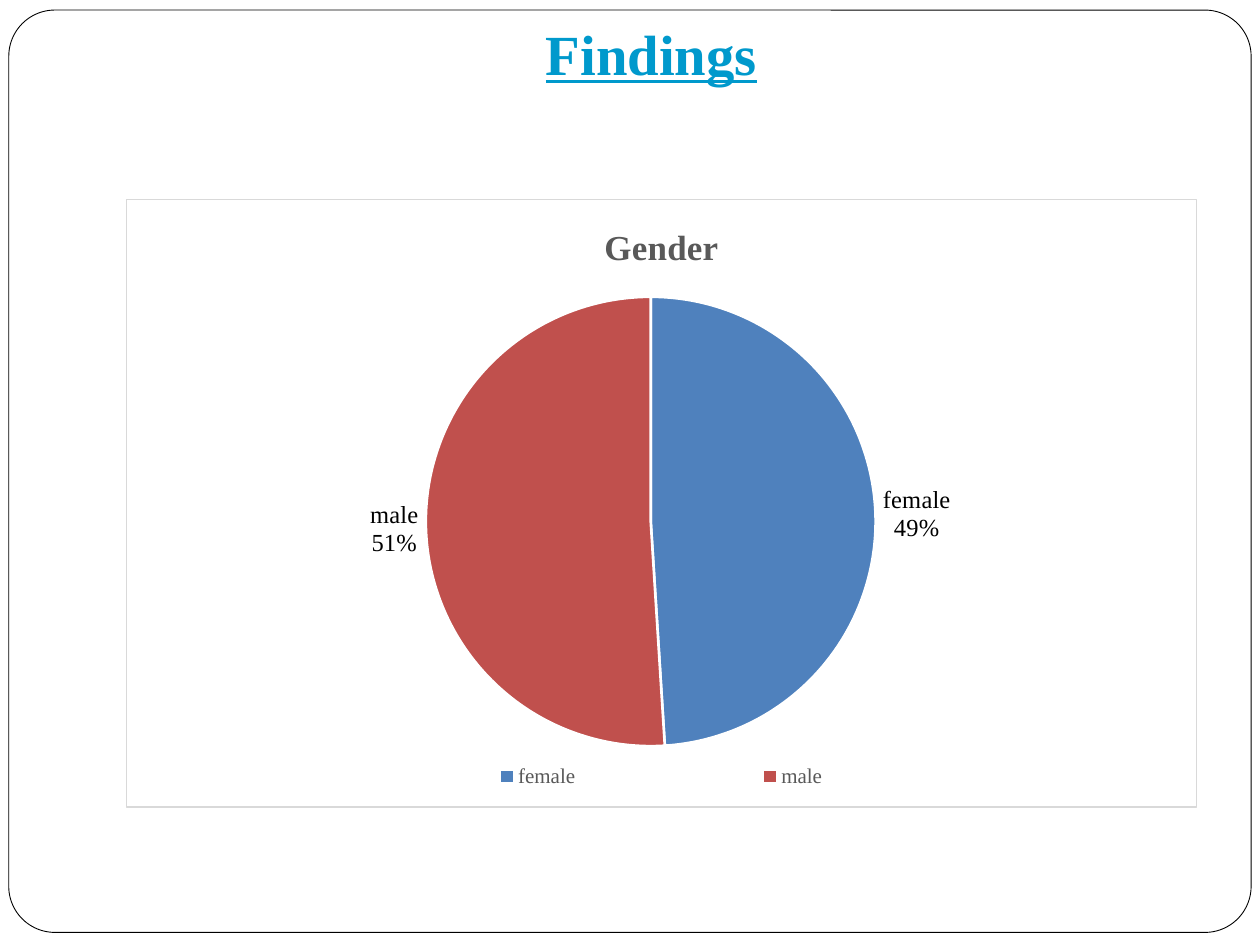
from dataclasses import dataclass

import pptx
import pptx.chart.data
import pptx.dml.color
import pptx.enum.chart
import pptx.enum.shapes
import pptx.enum.text
import pptx.oxml
import pptx.oxml.ns
import pptx.util
from pptx.util import Inches


@dataclass(frozen=True)
class Theme:
    font: str = "Times New Roman"
    white: str = "FFFFFF"
    black: str = "000000"
    accent: str = "0099CC"
    muted: str = "595959"
    border: str = "D9D9D9"
    slices: tuple = ("4F81BD", "C0504D")
    title_size: float = 32.4
    chart_title_size: float = 20
    label_size: float = 14
    legend_size: float = 12
    base_size: float = 10


def rgb(color):
    return pptx.dml.color.RGBColor.from_string(color)


def apply(target, values):
    for name, value in values.items():
        setattr(target, name, value)


class SlideBuilder:
    """Holds the theme and the current slide, and adds styled elements to it."""

    def __init__(self, slide, theme):
        self.slide = slide
        self.theme = theme

    def style_font(self, font, size, color, **values):
        apply(font, {"name": self.theme.font, "size": pptx.util.Pt(size), **values})
        font.color.rgb = rgb(color)

    def style_shape(self, target, fill, line, width):
        target.fill.solid()
        target.fill.fore_color.rgb = rgb(fill)
        target.line.color.rgb = rgb(line)
        target.line.width = pptx.util.Pt(width)

    def add_frame(self, box, radius):
        frame = self.slide.shapes.add_shape(
            pptx.enum.shapes.MSO_SHAPE.ROUNDED_RECTANGLE, *map(Inches, box))
        frame.adjustments[0] = radius
        frame.shadow.inherit = False
        self.style_shape(frame, self.theme.white, self.theme.black, 0.5)
        self.slide.shapes.title.element.addprevious(frame.element)

    def add_title(self, text, box):
        title = self.slide.shapes.title
        apply(title, dict(zip(("left", "top", "width", "height"), map(Inches, box))))
        text_frame = title.text_frame
        apply(text_frame, {
            "auto_size": pptx.enum.text.MSO_AUTO_SIZE.NONE,
            "vertical_anchor": pptx.enum.text.MSO_ANCHOR.BOTTOM,
            "word_wrap": True,
            "margin_left": Inches(0.1), "margin_right": Inches(0.1),
            "margin_top": Inches(0.05), "margin_bottom": Inches(0.1),
            "text": text,
        })
        paragraph = text_frame.paragraphs[0]
        apply(paragraph, {
            "alignment": pptx.enum.text.PP_ALIGN.CENTER,
            "line_spacing": 1.0,
            "space_before": pptx.util.Pt(0),
        })
        style = (self.theme.title_size, self.theme.accent)
        self.style_font(paragraph.font, *style, bold=True, underline=True)
        for run in paragraph.runs:
            self.style_font(run.font, *style, bold=True, underline=True)

    def add_pie(self, title, categories, values, box, plot_box, legend_box):
        theme = self.theme
        data = pptx.chart.data.CategoryChartData()
        data.categories = categories
        data.add_series("Series 1", values)
        chart = self.slide.shapes.add_chart(
            pptx.enum.chart.XL_CHART_TYPE.PIE, *map(Inches, box), data).chart
        self.style_font(chart.font, theme.base_size, theme.black)
        apply(chart, {"has_title": True, "has_legend": True})

        text_frame = chart.chart_title.text_frame
        text_frame.text = title
        self.style_font(text_frame.paragraphs[0].runs[0].font,
                        theme.chart_title_size, theme.muted, bold=True)
        apply(chart.legend, {
            "position": pptx.enum.chart.XL_LEGEND_POSITION.BOTTOM,
            "include_in_layout": False,
        })
        self.style_font(chart.legend.font, theme.legend_size, theme.muted)

        plot = chart.plots[0]
        apply(plot, {"vary_by_categories": True, "has_data_labels": True})
        for index, color in enumerate(theme.slices):
            self.style_shape(plot.series[0].points[index].format, color, theme.white, 1.5)
        apply(plot.data_labels, {
            "show_category_name": True, "show_percentage": True, "show_value": False,
            "number_format": "0%", "number_format_is_linked": False,
            "position": pptx.enum.chart.XL_LABEL_POSITION.OUTSIDE_END,
        })
        self.style_font(plot.data_labels.font, theme.label_size, theme.black)
        self.place_part(chart, "c:plotArea", plot_box, '<c:layoutTarget val="inner"/>')
        self.place_part(chart, "c:legend", legend_box)
        self.style_chart_area(chart)

    def place_part(self, chart, tag, box, target=""):
        qn = pptx.oxml.ns.qn
        part = chart.element.find(".//" + qn(tag))
        for layout in part.findall(qn("c:layout")):
            part.remove(layout)
        sizes = "".join(f'<c:{name} val="{value}"/>' for name, value in zip("xywh", box))
        layout = pptx.oxml.parse_xml(
            f'<c:layout {pptx.oxml.ns.nsdecls("c")}><c:manualLayout>{target}'
            f'<c:xMode val="edge"/><c:yMode val="edge"/>{sizes}</c:manualLayout></c:layout>')
        position = part.find(qn("c:legendPos"))
        part.insert(0 if position is None else part.index(position) + 1, layout)

    def style_chart_area(self, chart):
        def solid(color):
            return f'<a:solidFill><a:srgbClr val="{color}"/></a:solidFill>'

        chart.element.find(pptx.oxml.ns.qn("c:chart")).addnext(pptx.oxml.parse_xml(
            f'<c:spPr {pptx.oxml.ns.nsdecls("c", "a")}>{solid(self.theme.white)}'
            f'<a:ln w="{pptx.util.Pt(0.75)}">{solid(self.theme.border)}</a:ln></c:spPr>'))


def main():
    presentation = pptx.Presentation()
    apply(presentation, {"slide_width": Inches(10), "slide_height": Inches(7.5)})
    slide = presentation.slides.add_slide(presentation.slide_layouts[5])
    builder = SlideBuilder(slide, Theme())
    builder.add_frame((0.07, 0.08, 9.86, 7.32), 0.05)
    builder.add_title("Findings\v", (0.92, 0.75, 8.5, 0.58))
    builder.add_pie("Gender", ("female", "male"), (49, 51), (1, 1.58, 8.5, 4.83),
                    plot_box=(0.27, 0.16, 0.44, 0.74),
                    legend_box=(0.18, 0.92, 0.64, 0.06))
    presentation.save("out.pptx")


if __name__ == "__main__":
    main()
